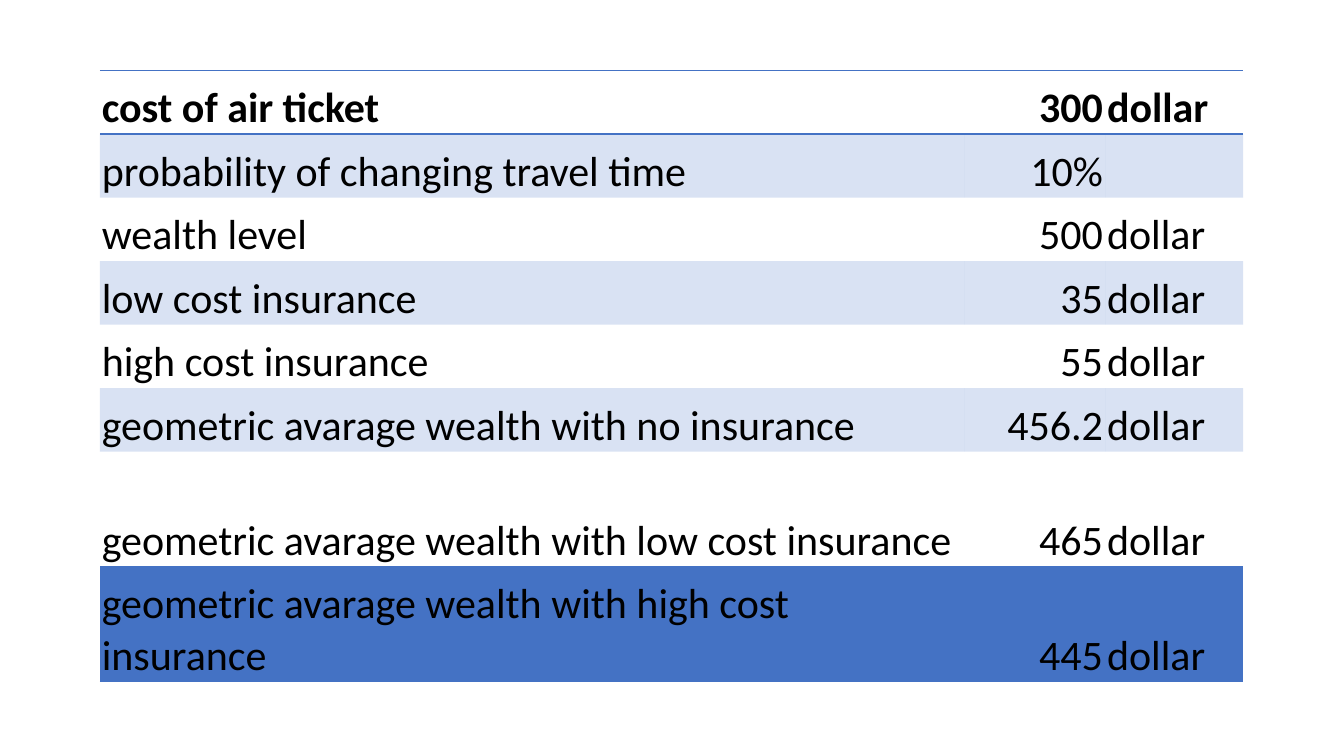
from typing import NamedTuple

from lxml import etree
from pptx import Presentation
from pptx import util as u
from pptx.dml.color import RGBColor
from pptx.enum import text
from pptx.oxml.ns import qn
from pptx.table import _Cell

ACCENT = "4472C4"
BLACK = "000000"
NO_STYLE = "{2D5ABB26-0587-4C30-8999-92F81FD0307C}"
COLUMN_WIDTHS = (8.58, 1.39, 1.37)
ALIGNMENTS = (text.PP_ALIGN.LEFT, text.PP_ALIGN.RIGHT, text.PP_ALIGN.LEFT)


class Quantity(NamedTuple):
    label: str
    value: str
    unit: str = "dollar"
    height: float = 0.63


QUANTITIES = (
    Quantity("cost of air ticket", "300"),
    Quantity("probability of changing travel time", "10%", unit=""),
    Quantity("wealth level", "500"),
    Quantity("low cost insurance", "35"),
    Quantity("high cost insurance", "55"),
    Quantity("geometric avarage wealth with no insurance", "456.2"),
    Quantity("geometric avarage wealth with low cost insurance", "465", height=1.14),
    Quantity("geometric avarage wealth with high cost insurance", "445", height=1.14),
)


def rgb(value: str) -> RGBColor:
    return RGBColor.from_string(value)


def add_border(cell: _Cell, side: str) -> None:
    properties = cell._tc.get_or_add_tcPr()
    line = etree.SubElement(properties, qn(f"a:{side}"), w=str(u.Pt(1)))
    paint = etree.SubElement(line, qn("a:solidFill"))
    etree.SubElement(paint, qn("a:srgbClr"), val=ACCENT)


def tint(cell: _Cell) -> None:
    cell.fill.solid()
    cell.fill.fore_color.rgb = rgb(ACCENT)
    accent = cell._tc.tcPr.find(".//" + qn("a:srgbClr"))
    etree.SubElement(accent, qn("a:alpha"), val="20000")


def write(cell: _Cell, content: str, alignment: text.PP_ALIGN, bold: bool) -> None:
    cell.margin_left = cell.margin_right = cell.margin_top = u.Inches(0.02)
    cell.margin_bottom = 0
    cell.vertical_anchor = text.MSO_ANCHOR.BOTTOM
    cell.text = content
    paragraph = cell.text_frame.paragraphs[0]
    paragraph.alignment = alignment
    paragraph.font.name = "Calibri"
    paragraph.font.size = u.Pt(30)
    paragraph.font.bold = bold
    paragraph.font.color.rgb = rgb(BLACK)


def main() -> None:
    deck = Presentation()
    deck.slide_width = u.Inches(13.33)
    deck.slide_height = u.Inches(7.5)
    slide = deck.slides.add_slide(deck.slide_layouts[6])

    frame = slide.shapes.add_table(
        len(QUANTITIES), len(COLUMN_WIDTHS),
        u.Inches(0.99), u.Inches(0.7),
        u.Inches(sum(COLUMN_WIDTHS)), u.Inches(sum(q.height for q in QUANTITIES)),
    )
    insurance = frame.table
    insurance.horz_banding = False
    insurance._tbl.tblPr.find(qn("a:tableStyleId")).text = NO_STYLE
    for column, width in zip(insurance.columns, COLUMN_WIDTHS):
        column.width = u.Inches(width)

    last = len(QUANTITIES) - 1
    for index, quantity in enumerate(QUANTITIES):
        insurance.rows[index].height = u.Inches(quantity.height)
        contents = (quantity.label, quantity.value, quantity.unit)
        for position, (content, alignment) in enumerate(zip(contents, ALIGNMENTS)):
            cell = insurance.cell(index, position)
            write(cell, content, alignment, bold=index == 0)
            if index == 0:
                add_border(cell, "lnT")
            if index in (0, last):
                add_border(cell, "lnB")
            if index % 2:
                tint(cell)

    deck.save("out.pptx")


if __name__ == "__main__":
    main()
